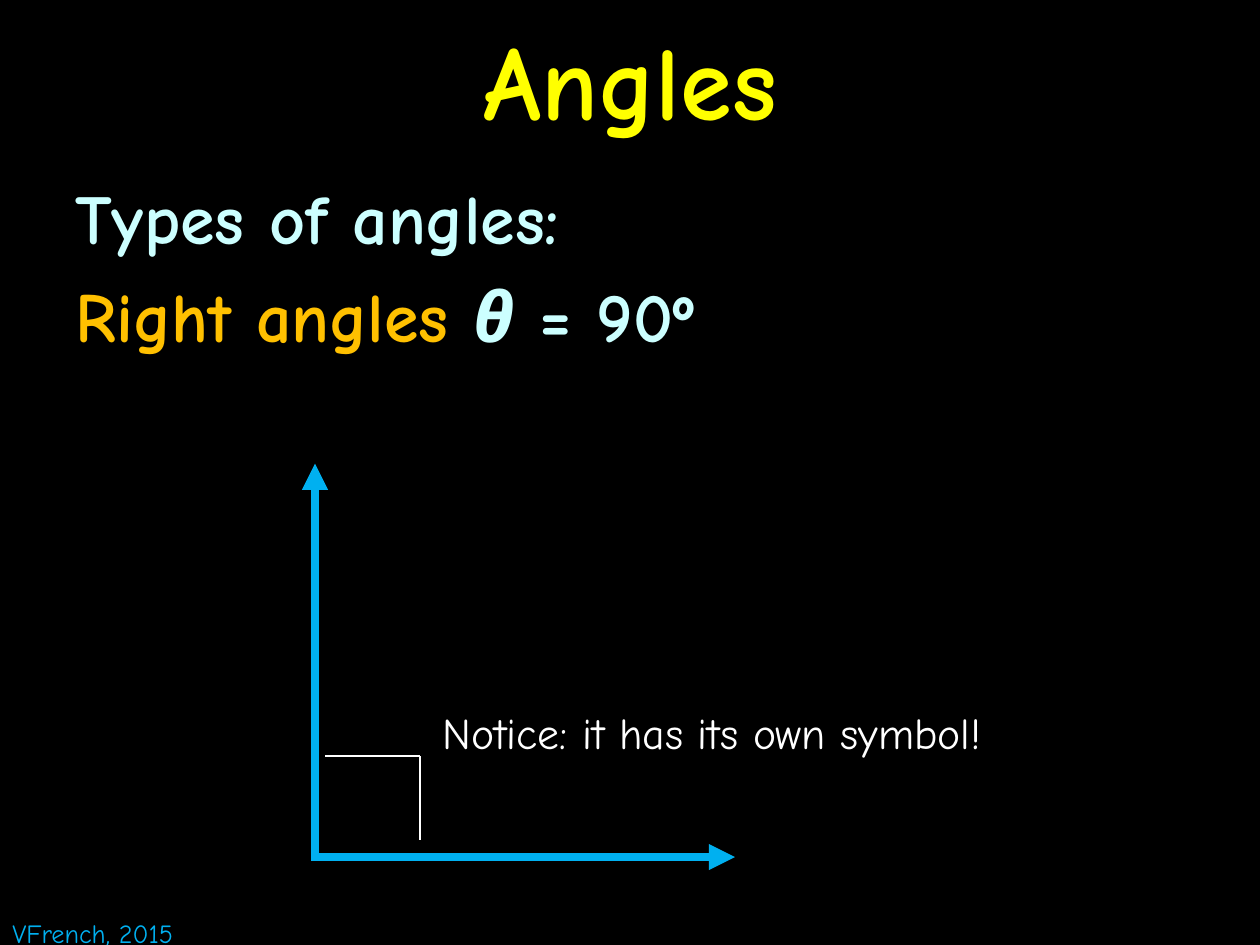
"""Build a slide that explains right angles and their symbol."""

from dataclasses import dataclass

from lxml import etree
from pptx import Presentation
from pptx.dml.color import RGBColor
from pptx.enum.shapes import MSO_CONNECTOR
from pptx.enum.text import MSO_ANCHOR, MSO_AUTO_SIZE, PP_ALIGN
from pptx.oxml.ns import qn
from pptx.slide import Slide
from pptx.util import Pt

STRAIGHT = MSO_CONNECTOR.STRAIGHT
TOP, MIDDLE = MSO_ANCHOR.TOP, MSO_ANCHOR.MIDDLE
LEFT, CENTER = PP_ALIGN.LEFT, PP_ALIGN.CENTER
FIT_SHAPE, NO_FIT = MSO_AUTO_SIZE.SHAPE_TO_FIT_TEXT, MSO_AUTO_SIZE.NONE

BLACK = RGBColor(0x00, 0x00, 0x00)
WHITE = RGBColor(0xFF, 0xFF, 0xFF)
YELLOW = RGBColor(0xFF, 0xFF, 0x00)
PALE_CYAN = RGBColor(0xCC, 0xFF, 0xFF)
ORANGE = RGBColor(0xFF, 0xC0, 0x00)
BLUE = RGBColor(0x00, 0xB0, 0xF0)
FONT = "Comic Neue"


@dataclass(frozen=True)
class Piece:
    text: str
    color: RGBColor
    italic: bool = False


@dataclass(frozen=True)
class TextBlock:
    box: tuple[float, float, float, float]
    size: float
    paragraphs: list[list[Piece]]
    bold: bool = False
    wrap: bool = True
    anchor: MSO_ANCHOR = TOP
    alignment: PP_ALIGN = LEFT
    space_before: float = 0


@dataclass(frozen=True)
class Line:
    start: tuple[float, float]
    end: tuple[float, float]
    color: RGBColor
    width: float
    arrow: bool = False


TEXT_BLOCKS = [
    TextBlock((0, 0, 720, 90), 60, [[Piece("Angles", YELLOW)]],
              bold=True, anchor=MIDDLE, alignment=CENTER),
    TextBlock((36, 96, 648, 444), 40,
              [[Piece("Types of angles:", PALE_CYAN)],
               [Piece("Right angles ", ORANGE),
                Piece("θ", PALE_CYAN, italic=True),
                Piece(" = 90º", PALE_CYAN)]],
              bold=True, space_before=8),
    TextBlock((0, 520.5, 121.5, 25.5), 15,
              [[Piece("VFrench, 2015", BLUE)]], wrap=False),
    TextBlock((246, 400, 359, 37.5), 25,
              [[Piece("Notice: it has its own symbol!", WHITE)]], wrap=False),
]

LINES = [
    Line((179, 489.75), (420, 489.75), BLUE, 5, arrow=True),
    Line((180, 492), (180, 265), BLUE, 5, arrow=True),
    Line((186, 432), (240, 432), WHITE, 0.75),
    Line((240, 432), (240, 480), WHITE, 0.75),
]


def add_text_block(slide: Slide, block: TextBlock) -> None:
    shape = slide.shapes.add_textbox(*map(Pt, block.box))
    text_frame = shape.text_frame
    text_frame.word_wrap = block.wrap
    text_frame.auto_size = NO_FIT if block.wrap else FIT_SHAPE
    text_frame.vertical_anchor = block.anchor
    text_frame.text = "\n".join(
        "".join(piece.text for piece in pieces[:1]) for pieces in block.paragraphs
    )
    for paragraph, pieces in zip(text_frame.paragraphs, block.paragraphs):
        paragraph.alignment = block.alignment
        paragraph.space_before = Pt(block.space_before)
        for piece in pieces[1:]:
            paragraph.add_run().text = piece.text
        for run, piece in zip(paragraph.runs, pieces):
            run.font.name = FONT
            run.font.size = Pt(block.size)
            run.font.bold = block.bold
            run.font.italic = piece.italic
            run.font.color.rgb = piece.color


def add_line(slide: Slide, line: Line) -> None:
    connector = slide.shapes.add_connector(
        STRAIGHT, *map(Pt, line.start + line.end)
    )
    connector.line.color.rgb = line.color
    connector.line.width = Pt(line.width)
    if line.arrow:
        outline = connector.line._get_or_add_ln()
        etree.SubElement(outline, qn("a:tailEnd"), type="triangle")
    etree.SubElement(connector._element.spPr, qn("a:effectLst"))


def main() -> None:
    presentation = Presentation()
    presentation.slide_width, presentation.slide_height = Pt(720), Pt(540)
    slide = presentation.slides.add_slide(presentation.slide_layouts[6])
    slide.background.fill.solid()
    slide.background.fill.fore_color.rgb = BLACK
    for block in TEXT_BLOCKS:
        add_text_block(slide, block)
    for line in LINES:
        add_line(slide, line)
    presentation.save("out.pptx")


if __name__ == "__main__":
    main()
